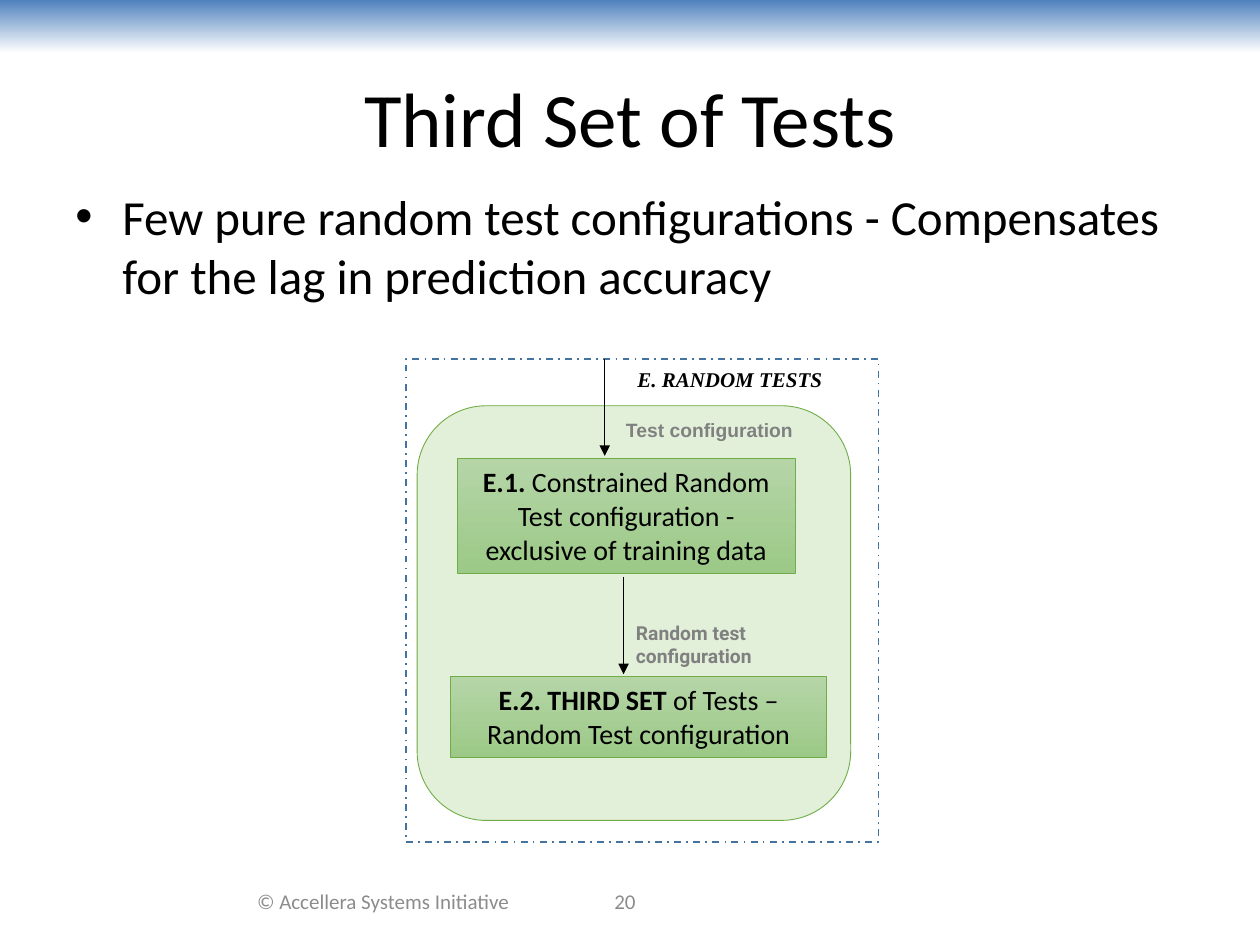
from dataclasses import dataclass

from lxml.etree import SubElement
from pptx import Presentation
from pptx.dml.color import RGBColor
from pptx.enum.dml import MSO_LINE
from pptx.enum.shapes import MSO_CONNECTOR, MSO_SHAPE
from pptx.enum.text import MSO_ANCHOR as ANCHOR, PP_ALIGN as ALIGN
from pptx.oxml.ns import qn
from pptx.util import Cm, Pt


@dataclass(frozen=True)
class Theme:
    black: str = "000000"
    white: str = "FFFFFF"
    banner: str = "4F81BD"
    footer: str = "8C8C8C"
    label: str = "808080"
    frame: str = "43739E"
    panel: str = "E2F0D9"
    green: str = "70AD47"
    step_top: str = "B5D5A7"
    step_bottom: str = "9CC987"
    font: str = "Calibri"
    title_size: int = 44
    body_size: int = 28
    step_size: int = 16
    small_size: int = 12
    label_size: int = 11


T = Theme()


def rgb(color):
    return RGBColor.from_string(color)


def add_runs(tf, runs, size, color=T.black, font=T.font, align=ALIGN.LEFT, italic=False):
    tf.word_wrap = True
    p = tf.paragraphs[0]
    p.alignment = align
    for text, bold in runs:
        r = p.add_run()
        r.text = text
        r.font.size = Pt(size)
        r.font.name = font
        r.font.bold = bold
        r.font.italic = italic
        r.font.color.rgb = rgb(color)
    return p


def add_text(s, box, text, size, anchor=ANCHOR.TOP, bold=False, **style):
    tf = s.shapes.add_textbox(*map(Cm, box)).text_frame
    tf.vertical_anchor = anchor
    return add_runs(tf, [(text, bold)], size, **style)


def add_box(s, box, fill=None, line=None, width=0.5, kind=MSO_SHAPE.RECTANGLE):
    sp = s.shapes.add_shape(kind, *map(Cm, box))
    sp.shadow.inherit = False
    if isinstance(fill, tuple):
        sp.fill.gradient()
        sp.fill.gradient_angle = 270
        for stop, color in zip(sp.fill.gradient_stops, fill):
            stop.color.rgb = rgb(color)
    elif fill:
        sp.fill.solid()
        sp.fill.fore_color.rgb = rgb(fill)
    else:
        sp.fill.background()
    if line:
        sp.line.color.rgb = rgb(line)
        sp.line.width = Pt(width)
    else:
        sp.line.fill.background()
    return sp


def add_step(s, box, runs):
    sp = add_box(s, box, (T.step_top, T.step_bottom), T.green)
    sp.text_frame.vertical_anchor = ANCHOR.TOP
    add_runs(sp.text_frame, runs, T.step_size, align=ALIGN.CENTER)


def add_down_arrow(s, x, top, bottom):
    cx = s.shapes.add_connector(MSO_CONNECTOR.STRAIGHT, Cm(x), Cm(top), Cm(x), Cm(bottom))
    cx.line.color.rgb = rgb(T.black)
    cx.line.width = Pt(0.5)
    SubElement(cx.line._get_or_add_ln(), qn("a:tailEnd"), type="triangle")
    SubElement(cx._element.spPr, qn("a:effectLst"))


def add_header(s, x, y, w):
    add_box(s, (x, y, w, 1.07), (T.banner, T.white))
    add_text(s, (x + 1.27, y + 0.76, w - 2.54, 3.18), "Third Set of Tests",
             T.title_size, ANCHOR.MIDDLE, align=ALIGN.CENTER)


def add_body(s, box):
    p = add_text(s, box, "Few pure random test configurations - Compensates "
                 "for the lag in prediction accuracy", T.body_size)
    pPr = p._p.get_or_add_pPr()
    indent = Cm(0.95)
    pPr.set("marL", str(indent))
    pPr.set("indent", str(-indent))
    SubElement(pPr, qn("a:buFont"), typeface="Arial")
    SubElement(pPr, qn("a:buChar"), char="•")


def add_flow(s, x, y, w, h):
    frame = add_box(s, (x, y, w, h), line=T.frame, width=1)
    frame.line.dash_style = MSO_LINE.DASH_DOT
    add_box(s, (x + 0.23, y + 0.94, 8.74, 8.36), T.panel, T.green,
            kind=MSO_SHAPE.ROUNDED_RECTANGLE)
    add_step(s, (x + 1.04, y + 2.01, 6.81, 2.31), [
        ("E.1. ", True),
        ("Constrained Random Test configuration - exclusive of training data", False)])
    add_step(s, (x + 0.91, y + 6.4, 7.57, 1.63), [
        ("E.2. THIRD SET", True),
        (" of Tests – Random Test configuration", False)])
    add_text(s, (x + 4.39, y + 5.16, 3.48, 1.19), "Random test configuration",
             T.label_size, bold=True, color=T.label, font="Roboto")
    add_down_arrow(s, x + 4.39, y + 4.39, y + 6.35)
    add_text(s, (x + 4.42, y + 0.02, 4.85, 0.76), "E. RANDOM TESTS",
             T.small_size, bold=True, font="Times New Roman", italic=True)
    add_text(s, (x + 4.19, y + 1.07, 8.79, 0.74), "Test configuration",
             T.label_size, bold=True, color=T.label, font="Arial")
    add_down_arrow(s, x + 4.01, y, y + 1.95)


def add_footer(s, x, y, h):
    for left, width, text in ((x, 6.15, "© Accellera Systems Initiative"),
                              (x + 5.51, 4.88, "20")):
        add_text(s, (left, y, width, h), text, T.small_size, ANCHOR.MIDDLE,
                 color=T.footer, align=ALIGN.CENTER)


def main():
    prs = Presentation()
    prs.slide_width, prs.slide_height = Cm(25.4), Cm(19.05)
    s = prs.slides.add_slide(prs.slide_layouts[6])
    add_header(s, 0, 0, 25.4)
    add_footer(s, 4.65, 17.65, 1.02)
    add_flow(s, 8.18, 7.24, 9.53, 9.73)
    add_body(s, (1.27, 3.63, 22.86, 3.99))
    prs.save("out.pptx")


if __name__ == "__main__":
    main()
